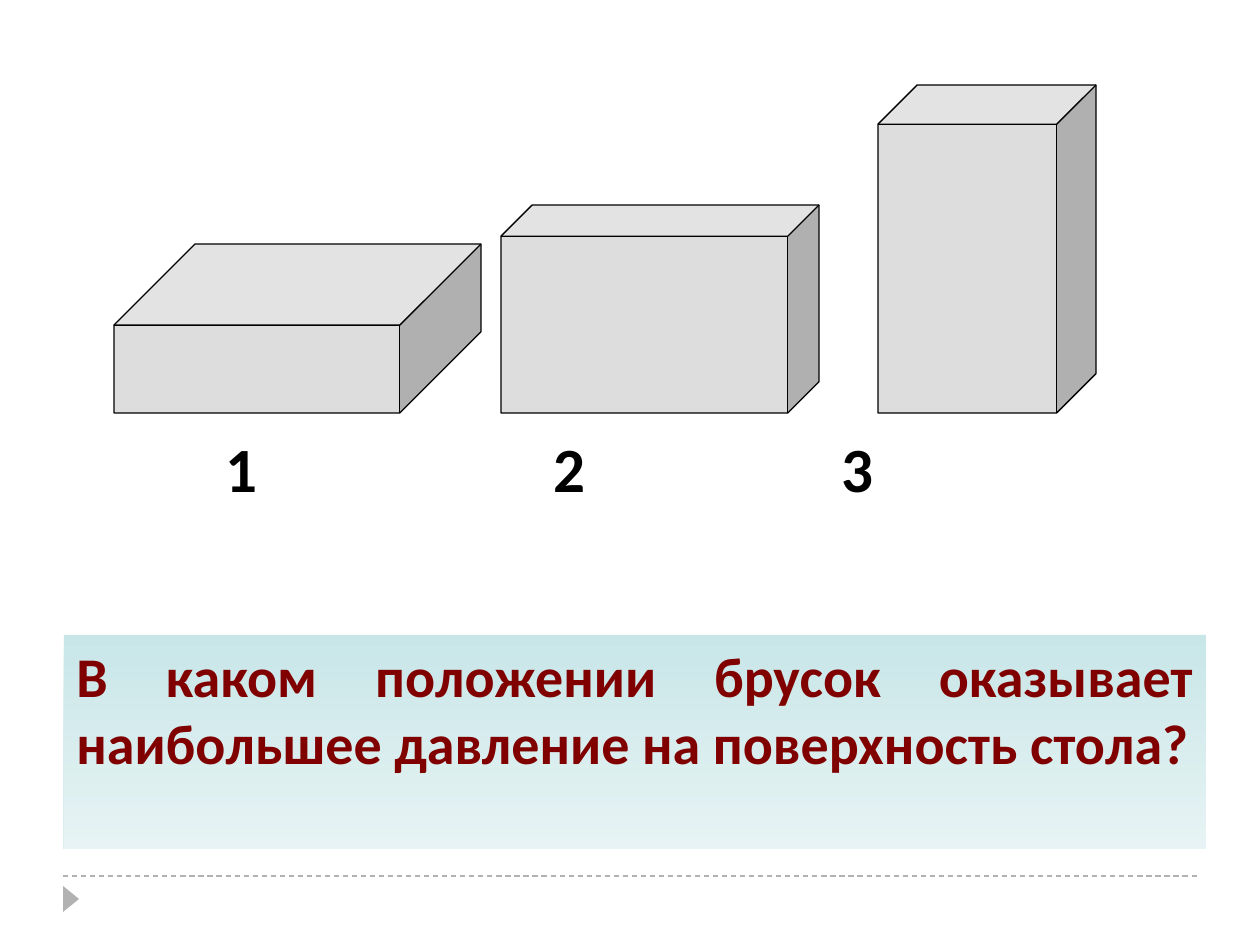
from typing import NamedTuple

from lxml.etree import SubElement
from pptx import Presentation
from pptx.dml.color import RGBColor
from pptx.enum.dml import MSO_LINE_DASH_STYLE as Dash
from pptx.enum.shapes import MSO_CONNECTOR as Connector, MSO_SHAPE as Shape
from pptx.enum.text import MSO_ANCHOR as Anchor, PP_ALIGN as Align
from pptx.oxml.ns import qn
from pptx.util import Emu, Pt

PX = 914400 / 126
FONT = "Calibri"
BLACK, GREY, BLOCK_GREY, MAROON = "000000", "B2B2B2", "DDDDDD", "800000"
PANEL_STOPS = ("BBE0E3", "E2F1F2")
PANEL_ALPHA = 80
BLOCK_BOTTOM = 413
LABEL_TABS = (328, 616)


class Block(NamedTuple):
    left: int
    width: int
    height: int
    depth: float


BLOCKS = (
    Block(114, 367, 169, 0.48),
    Block(501, 318, 208, 0.15),
    Block(878, 218, 328, 0.18),
)


def px(n: int) -> Emu:
    return Emu(round(n * PX))


def rgb(color: str) -> RGBColor:
    return RGBColor.from_string(color)


def add_plain(slide, kind, left: int, top: int, width: int, height: int):
    """Add a preset shape without shadow or outline."""
    s = slide.shapes.add_shape(kind, px(left), px(top), px(width), px(height))
    s.shadow.inherit = False
    s.line.fill.background()
    return s


def fill_solid(s, color: str) -> None:
    s.fill.solid()
    s.fill.fore_color.rgb = rgb(color)


def add_run(p, text: str, size: int, color: str) -> None:
    r = p.add_run()
    r.text = text
    r.font.name, r.font.size, r.font.bold = FONT, Pt(size), True
    r.font.color.rgb = rgb(color)


def add_footer(slide) -> None:
    line = slide.shapes.add_connector(
        Connector.STRAIGHT, px(63), px(876), px(1197), px(876))
    line.line.color.rgb = rgb(GREY)
    line.line.width = Pt(0.75)
    line.line.dash_style = Dash.DASH
    SubElement(line._element.spPr, qn("a:effectLst"))
    marker = add_plain(slide, Shape.ISOSCELES_TRIANGLE, 58, 891, 26, 16)
    marker.rotation = 90
    fill_solid(marker, GREY)


def add_question(slide) -> None:
    s = add_plain(slide, Shape.RECTANGLE, 64, 635, 1142, 214)
    s.fill.gradient()
    s.fill.gradient_angle = 270
    for stop, color, position in zip(s.fill.gradient_stops, PANEL_STOPS, (0, 1)):
        stop.color.rgb = rgb(color)
        stop.position = position
    for clr in s._element.spPr.iter(qn("a:srgbClr")):
        SubElement(clr, qn("a:alpha"), val=str(PANEL_ALPHA * 1000))
    tf = s.text_frame
    tf.word_wrap = True
    tf.vertical_anchor = Anchor.TOP
    p = tf.paragraphs[0]
    p.alignment = Align.JUSTIFY
    add_run(p, "В каком положении брусок оказывает наибольшее давление "
               "на поверхность стола?", 32, MAROON)


def add_block(slide, block: Block) -> None:
    s = add_plain(slide, Shape.CUBE, block.left, BLOCK_BOTTOM - block.height,
                  block.width, block.height)
    s.adjustments[0] = block.depth
    fill_solid(s, BLOCK_GREY)
    s.line.color.rgb = rgb(BLACK)
    s.line.width = Pt(0.75)


def add_labels(slide) -> None:
    """Number the blocks on one line, spaced by tab stops."""
    s = slide.shapes.add_textbox(px(213), px(423), px(824), px(88))
    tf = s.text_frame
    tf.word_wrap = True
    p = tf.paragraphs[0]
    tabs = SubElement(p._p.get_or_add_pPr(), qn("a:tabLst"))
    for tab in LABEL_TABS:
        SubElement(tabs, qn("a:tab"), pos=str(px(tab)), algn="l")
    add_run(p, "1\t2\t3", 36, BLACK)


def main() -> None:
    prs = Presentation()
    prs.slide_width, prs.slide_height = px(1260), px(945)
    slide = prs.slides.add_slide(prs.slide_layouts[6])
    add_footer(slide)
    add_question(slide)
    for block in BLOCKS:
        add_block(slide, block)
    add_labels(slide)
    prs.save("out.pptx")


if __name__ == "__main__":
    main()
